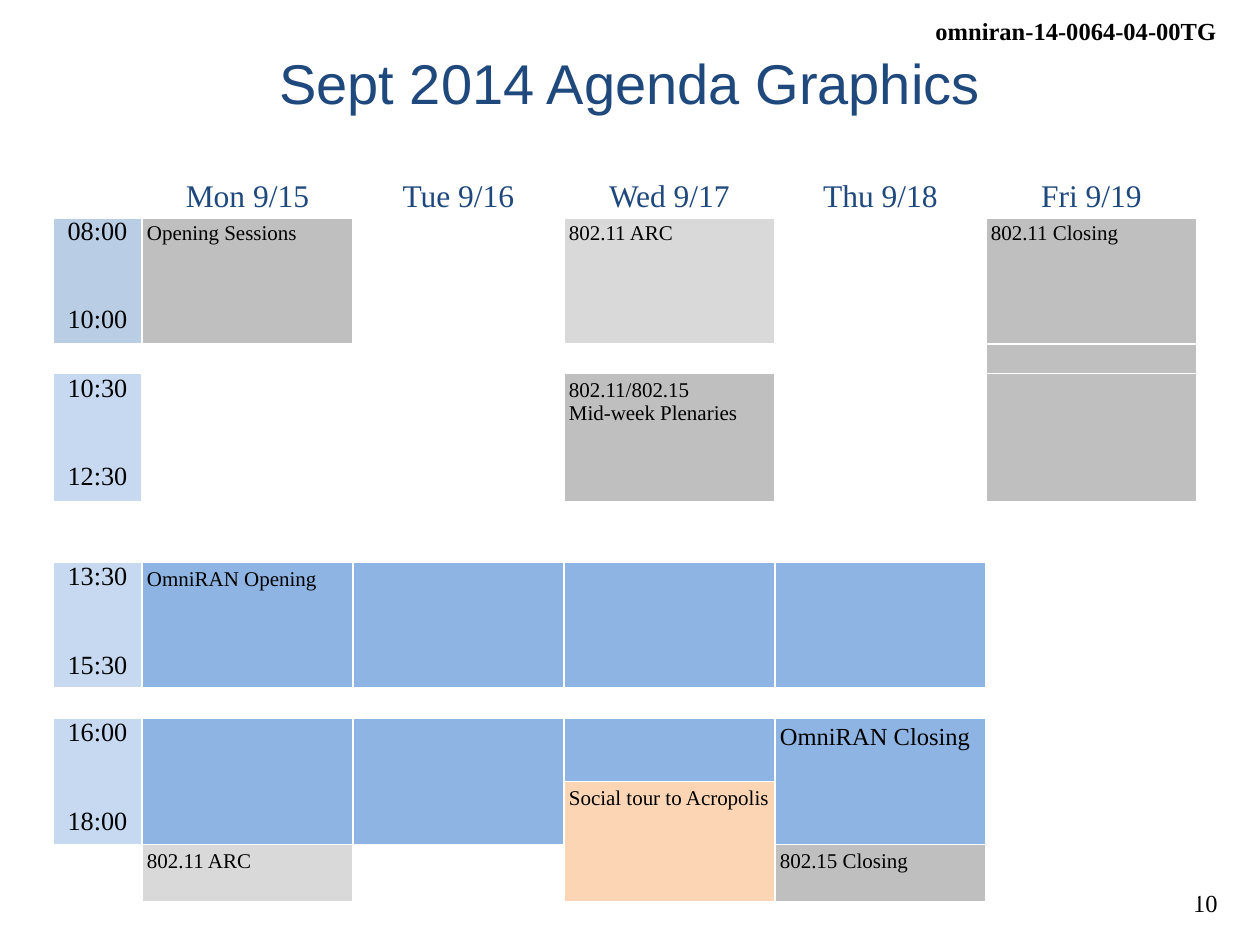
from itertools import product

from lxml.etree import SubElement
from pptx import Presentation
from pptx.dml.color import RGBColor
from pptx.enum.text import MSO_ANCHOR, PP_ALIGN
from pptx.oxml.ns import qn
from pptx.util import Pt

SCALE = 914400 / 126
COLORS = {
    "white": "FFFFFF",
    "black": "000000",
    "navy": "1F497D",
    "early": "B9CDE5",
    "time": "C6D9F1",
    "plenary": "BFBFBF",
    "arc": "D9D9D9",
    "omniran": "8EB4E3",
    "social": "FCD5B5",
}
SERIF = "Times New Roman"
DAYS = ["Mon 9/15", "Tue 9/16", "Wed 9/17", "Thu 9/18", "Fri 9/19"]
ROW_HEIGHTS = [36, 58, 69, 30, 128, 30, 31, 125, 31, 63, 63, 57]
COLUMN_WIDTHS = [89] + [211] * len(DAYS)
TIME_SLOTS = [
    (1, 2, "early", "08:00", "10:00"),
    (4, 1, "time", "10:30", "12:30"),
    (7, 1, "time", "13:30", "15:30"),
    (9, 2, "time", "16:00", "18:00"),
]
SESSIONS = [
    (1, 1, 2, "plenary", "Opening Sessions", 12),
    (1, 3, 2, "arc", "802.11 ARC", 12),
    (1, 4, 2, "white", "", 12),
    (1, 5, 2, "plenary", "802.11 Closing", 12),
    (3, 5, 1, "plenary", "", 12),
    (4, 3, 1, "plenary", "802.11/802.15\vMid-week Plenaries", 12),
    (4, 5, 1, "plenary", "", 12),
    *[(5, column, 2, "white", "", 12) for column in range(5)],
    (6, 5, 5, "white", "", 12),
    (7, 1, 1, "omniran", "OmniRAN Opening", 12),
    *[(7, column, 1, "omniran", "", 12) for column in (2, 3, 4)],
    *[(9, column, 2, "omniran", "", 12) for column in (1, 2)],
    (9, 3, 1, "omniran", "", 12),
    (9, 4, 2, "omniran", "OmniRAN Closing", 14),
    (10, 3, 2, "social", "Social tour to Acropolis", 12),
    (11, 1, 1, "arc", "802.11 ARC", 12),
    (11, 4, 1, "plenary", "802.15 Closing", 12),
]


def px(length):
    return round(length * SCALE)


def rgb(name):
    return RGBColor.from_string(COLORS[name])


def write(frame, *lines, size=12, font=SERIF, color="black", bold=False,
          align=PP_ALIGN.LEFT, gap=0):
    for index, line in enumerate(lines):
        paragraph = frame.add_paragraph() if index else frame.paragraphs[0]
        paragraph.text = line
        paragraph.alignment = align
        paragraph.space_before = Pt(gap if index else 0)
        for run in paragraph.runs:
            run.font.size = Pt(size)
            run.font.name = font
            run.font.bold = bold
            run.font.color.rgb = rgb(color)


def set_borders(cell, bottom):
    properties = cell._tc.get_or_add_tcPr()
    for side, width in (("L", 1), ("R", 1), ("T", 1), ("B", bottom)):
        line = SubElement(properties, qn(f"a:ln{side}"), w=str(Pt(width)))
        fill = SubElement(line, qn("a:solidFill"))
        SubElement(fill, qn("a:srgbClr"), val=COLORS["white"])


def set_margins(cell, margin):
    cell.margin_left = cell.margin_right = px(margin)
    cell.margin_top = cell.margin_bottom = px(margin)


def paint(cell, color):
    cell.fill.solid()
    cell.fill.fore_color.rgb = rgb(color)


def block(table, row, column, span, color):
    cell = table.cell(row, column)
    if span > 1:
        cell.merge(table.cell(row + span - 1, column))
    paint(cell, color)
    return cell


def add_label(slide, left, top, width, height, text, bold=False):
    frame = slide.shapes.add_textbox(px(left), px(top), px(width), px(height)).text_frame
    frame.word_wrap = False
    write(frame, text, size=14, bold=bold, align=PP_ALIGN.RIGHT)


def add_title(slide, left, top, width, height):
    title = slide.shapes.title
    title.left, title.top, title.width, title.height = map(px, (left, top, width, height))
    frame = title.text_frame
    frame.vertical_anchor = MSO_ANCHOR.MIDDLE
    frame.margin_top, frame.margin_bottom = px(6), px(16)
    write(frame, "Sept 2014 Agenda Graphics", size=32, font="Arial", color="navy",
          align=PP_ALIGN.CENTER)


def add_agenda(slide, left, top):
    table = slide.shapes.add_table(
        len(ROW_HEIGHTS), len(COLUMN_WIDTHS), px(left), px(top),
        px(sum(COLUMN_WIDTHS)), px(sum(ROW_HEIGHTS))).table
    table.first_row = table.horz_banding = False
    for row, height in zip(table.rows, ROW_HEIGHTS):
        row.height = px(height)
    for column, width in zip(table.columns, COLUMN_WIDTHS):
        column.width = px(width)
    for row, column in product(range(len(ROW_HEIGHTS)), range(len(COLUMN_WIDTHS))):
        cell = table.cell(row, column)
        set_borders(cell, bottom=1 if row else 3)
        paint(cell, "white")
        set_margins(cell, 0)
        SubElement(cell.text_frame.paragraphs[0]._p, qn("a:endParaRPr"), sz="1200")

    for column, day in enumerate(DAYS, start=1):
        write(table.cell(0, column).text_frame, day, size=18, color="navy",
              align=PP_ALIGN.CENTER)
    for row, span, color, start, end in TIME_SLOTS:
        write(block(table, row, 0, span, color).text_frame, start, end, size=15,
              align=PP_ALIGN.CENTER, gap=34)
    for row, column, span, color, session, size in SESSIONS:
        cell = block(table, row, column, span, color)
        if session:
            set_margins(cell, 5)
            write(cell.text_frame, session, size=size)


def main():
    deck = Presentation()
    deck.slide_width, deck.slide_height = px(1260), px(945)
    slide = deck.slides.add_slide(deck.slide_layouts[5])
    add_label(slide, 920, 10, 309, 43, "omniran-14-0064-04-00TG", bold=True)
    add_label(slide, 1176, 882, 54, 43, "10")
    add_title(slide, 63, 38, 1134, 98)
    add_agenda(slide, 53, 179)
    deck.save("out.pptx")


if __name__ == "__main__":
    main()
